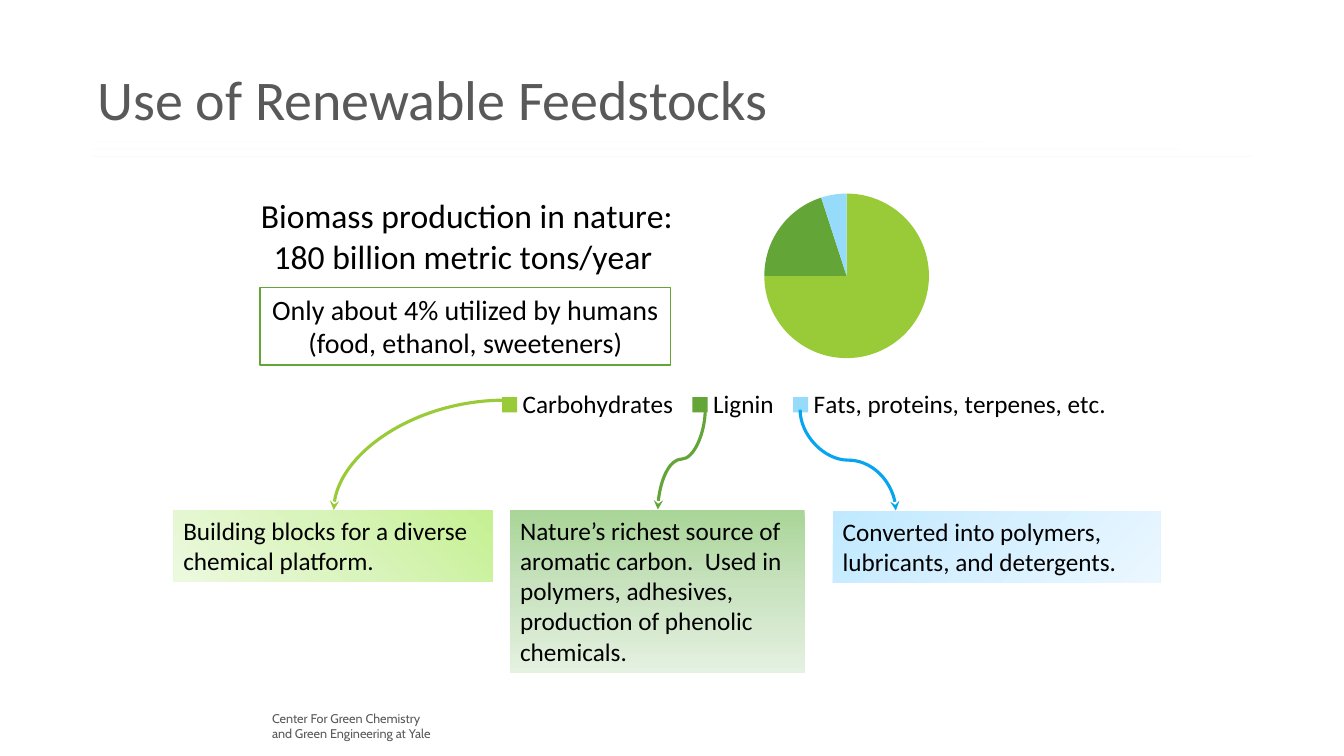
from copy import deepcopy

from lxml import etree
from pptx import Presentation
from pptx.chart.data import CategoryChartData
from pptx.dml.color import RGBColor
from pptx.enum.chart import XL_CHART_TYPE, XL_LEGEND_POSITION
from pptx.enum.shapes import MSO_CONNECTOR, MSO_SHAPE
from pptx.enum.text import MSO_ANCHOR, PP_ALIGN
from pptx.oxml.ns import qn
from pptx.util import Inches, Pt

PIE = XL_CHART_TYPE.PIE
BOTTOM = XL_LEGEND_POSITION.BOTTOM
CURVE, STRAIGHT = MSO_CONNECTOR.CURVE, MSO_CONNECTOR.STRAIGHT
RECTANGLE = MSO_SHAPE.RECTANGLE
TOP = MSO_ANCHOR.TOP
LEFT, CENTER = PP_ALIGN.LEFT, PP_ALIGN.CENTER

COLORS = {
    "text": "000000", "grey": "595959", "white": "FFFFFF",
    "carbohydrates": "99CB38", "lignin": "63A537", "fats": "97DBFB",
    "fats arrow": "08A5EF",
    "rule blue": "4EB3CF", "rule teal": "44C1A3", "rule green": "37A76F",
    "lime 1": "C5F092", "lime 2": "DAF4BD", "lime 3": "ECF9DF",
    "green 1": "A9D598", "green 2": "CAE3C1", "green 3": "E5F1E1",
    "sky 1": "C0E9FF", "sky 2": "D7F0FF", "sky 3": "EBF7FF",
}
COLORS = {name: RGBColor.from_string(value) for name, value in COLORS.items()}


def write(frame, lines, size, color="text", font="Calibri", align=LEFT, wrap=True):
    frame.word_wrap = wrap
    frame.vertical_anchor = TOP
    for index, line in enumerate(lines):
        para = frame.add_paragraph() if index else frame.paragraphs[0]
        para.alignment = align
        span = para.add_run()
        span.text = line
        for name, value in {"size": Pt(size), "name": font, "bold": False}.items():
            setattr(span.font, name, value)
        span.font.color.rgb = COLORS[color]


def draw_line(kind, ends, color, width):
    line = page.shapes.add_connector(kind, *[Inches(value) for value in ends])
    line.line.color.rgb = COLORS[color]
    line.line.width = Pt(width)
    etree.SubElement(line.element.spPr, qn("a:effectLst"))
    return line


deck = Presentation()
deck.slide_width, deck.slide_height = Inches(13.33), Inches(7.5)
page = deck.slides.add_slide(deck.slide_layouts[6])

# Footer and title
box = page.shapes.add_textbox(Inches(2.6), Inches(7), Inches(1.86), Inches(0.4))
write(box.text_frame, ["Center For Green Chemistry", "and Green Engineering at Yale"],
      9, "grey", "Cabin")
box = page.shapes.add_textbox(Inches(0.87), Inches(0.59), Inches(7.06), Inches(0.77))
write(box.text_frame, ["Use of Renewable Feedstocks"], 40, "grey", wrap=False)

# Barely visible rules under the title
for left, right, top, color in [(0.92, 9.77, 1.41, "rule blue"),
                                (0.9, 11.71, 1.48, "rule teal"),
                                (0.91, 12.42, 1.55, "rule green")]:
    rule = draw_line(STRAIGHT, (left, top, right, top), color, 0.5)
    for tint in rule.element.iter(qn("a:srgbClr")):
        etree.SubElement(tint, qn("a:alpha")).set("val", "3000")

# Pie of biomass composition
data = CategoryChartData()
data.categories = ["Carbohydrates", "Lignin", "Fats, proteins, terpenes, etc."]
data.add_series("Series 1", (75, 20, 5))
chart = page.shapes.add_chart(PIE, Inches(2.17), Inches(1.77), Inches(9), Inches(2.69),
                              data).chart
chart.font.size = Pt(18)
chart.font.name = "Calibri"
chart.font.color.rgb = COLORS["text"]
write(chart.chart_title.text_frame,
      ["Biomass production in nature:", "180 billion metric tons/year "], 24, align=CENTER)
chart.has_legend = True
chart.legend.position = BOTTOM
chart.legend.include_in_layout = False
chart.legend.font.size = Pt(18)
chart.legend.font.name = "Calibri"
chart.legend.font.color.rgb = COLORS["text"]
plot = chart.plots[0]
plot.vary_by_categories = True
for index, name in enumerate(["carbohydrates", "lignin", "fats"]):
    fill = plot.series[0].points[index].format.fill
    fill.solid()
    fill.fore_color.rgb = COLORS[name]

# Fixed places of the chart title, pie and legend, as shares of the chart
for tag, after, place in [
        ("c:title", "c:tx", {"x": 0.043, "y": 0.05}),
        ("c:plotArea", None, {"x": 0.422, "y": 0.056, "w": 0.54, "h": 0.607}),
        ("c:legend", "c:legendPos", {"x": 0.3, "y": 0.76, "w": 0.69, "h": 0.15})]:
    part = next(chart.element.iter(qn(tag)))
    for old in part.findall(qn("c:layout")):
        part.remove(old)
    layout = etree.Element(qn("c:layout"))
    manual = etree.SubElement(layout, qn("c:manualLayout"))
    if tag == "c:plotArea":
        etree.SubElement(manual, qn("c:layoutTarget")).set("val", "inner")
    for axis in "xy":
        etree.SubElement(manual, qn(f"c:{axis}Mode")).set("val", "edge")
    for key, value in place.items():
        etree.SubElement(manual, qn(f"c:{key}")).set("val", str(value))
    part.insert(part.index(part.find(qn(after))) + 1 if after else 0, layout)

# Framed note on human use
note = page.shapes.add_shape(RECTANGLE, Inches(2.58), Inches(2.85), Inches(4.07), Inches(0.77))
note.shadow.inherit = False
note.fill.solid()
note.fill.fore_color.rgb = COLORS["white"]
note.line.color.rgb = COLORS["lignin"]
note.line.width = Pt(1)
write(note.text_frame, ["Only about 4% utilized by humans", "(food, ethanol, sweeteners)"],
      20, align=CENTER, wrap=False)

# Uses of each fraction, on gradient boxes
for left, top, width, height, tint, angle, use in [
        (5.06, 5.06, 2.92, 1.62, "green", 90,
         "Nature’s richest source of aromatic carbon.  Used in polymers, adhesives, "
         "production of phenolic chemicals."),
        (8.26, 5.07, 3.25, 0.71, "sky", 45,
         "Converted into polymers, lubricants, and detergents."),
        (1.72, 5.06, 3.17, 0.71, "lime", 135,
         "Building blocks for a diverse chemical platform.")]:
    box = page.shapes.add_shape(RECTANGLE, Inches(left), Inches(top),
                                Inches(width), Inches(height))
    box.shadow.inherit = False
    box.line.fill.background()
    box.fill.gradient()
    box.fill.gradient_angle = 360 - angle
    stops = next(box.element.iter(qn("a:gsLst")))
    stops.insert(1, deepcopy(stops[0]))
    for index, stop in enumerate(box.fill.gradient_stops):
        stop.position = index / 2
        stop.color.rgb = COLORS[f"{tint} {index + 1}"]
    write(box.text_frame, [use], 18)

# Curved arrows from the legend to the boxes
for left, top, width, height, turn, flip, preset, color in [
        (3.31, 3.97, 1.69, 1.09, 180, "flipV", "curvedConnector2", "carbohydrates"),
        (6.26, 4.32, 1, 0.47, 90, None, "curvedConnector3", "lignin"),
        (7.91, 4.09, 1, 0.95, 270, "flipH", "curvedConnector3", "fats arrow")]:
    arrow = draw_line(CURVE, (left, top, left + width, top + height), color, 2.25)
    frame = arrow.element.spPr.find(qn("a:xfrm"))
    frame.set("rot", str(turn * 60000))
    if flip:
        frame.set(flip, "1")
    arrow.element.spPr.find(qn("a:prstGeom")).set("prst", preset)
    outline = arrow.element.spPr.find(qn("a:ln"))
    etree.SubElement(outline, qn("a:tailEnd")).set("type", "stealth")

deck.save("out.pptx")
